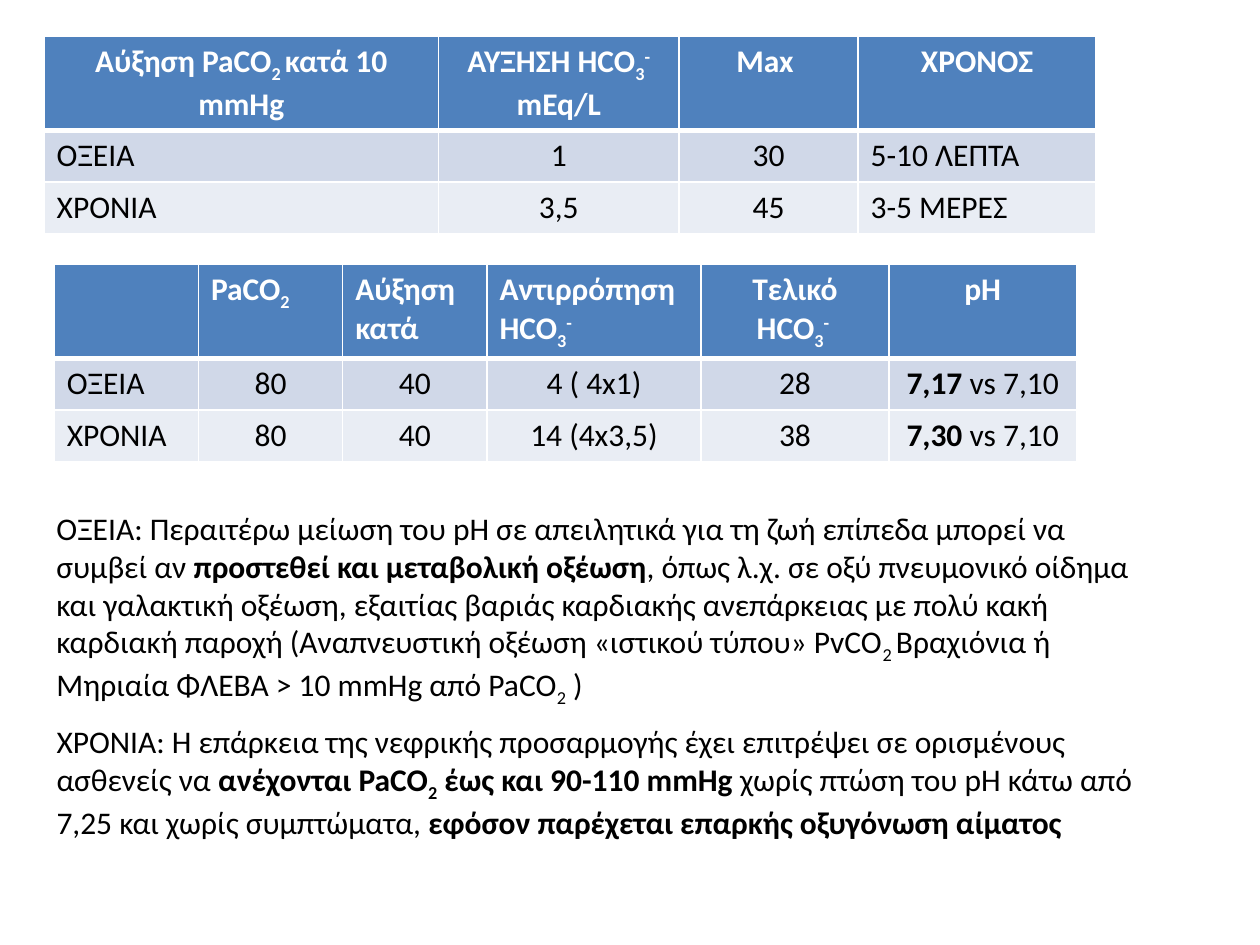
from lxml.etree import SubElement
from pptx import Presentation
from pptx.dml.color import RGBColor
from pptx.enum.text import MSO_AUTO_SIZE, PP_ALIGN
from pptx.oxml.ns import qn
from pptx.util import Inches, Pt

LEFT, CENTER = PP_ALIGN.LEFT, PP_ALIGN.CENTER
BOLD, SUB, SUPER = "bold", "sub", "super"
BASELINES = {SUB: "-25000", SUPER: "30000"}
TWO, THREE, MINUS = ("2", SUB), ("3", SUB), ("-", SUPER)


def color(value):
    """Turn a hex string into a colour."""
    return RGBColor.from_string(value)


class SlideBuilder:
    """Hold the style and the current slide, on a grid of 100 columns by 75 rows."""

    font, size = "Calibri", 18
    ink, paper = "000000", "FFFFFF"
    header_fill, band_fills = "4F81BD", ("E9EDF4", "D0D8E8")
    header_height, row_height = 6.9, 4.1

    def __init__(self, presentation):
        """Set the slide size and add a blank slide."""
        presentation.slide_width, presentation.slide_height = Inches(10), Inches(7.5)
        self.unit = presentation.slide_width / 100
        self.slide = presentation.slides.add_slide(presentation.slide_layouts[6])

    def grid(self, *lengths):
        """Turn grid lengths into slide lengths."""
        return [round(length * self.unit) for length in lengths]

    def add_runs(self, paragraph, runs, ink, bold=False, align=LEFT):
        """Fill a paragraph with runs, each plain text or text with styles."""
        paragraph.alignment = align
        for item in runs:
            text, *styles = (item,) if isinstance(item, str) else item
            run = paragraph.add_run()
            run.text = text
            run.font.name, run.font.size = self.font, Pt(self.size)
            run.font.bold = bold or BOLD in styles
            run.font.color.rgb = color(ink)
            for style in styles:
                if style in BASELINES:
                    run.font._element.set("baseline", BASELINES[style])

    def border(self, cell, side, width):
        """Draw one side of a cell."""
        line = SubElement(cell._tc.get_or_add_tcPr(), qn(f"a:ln{side}"), w=str(Pt(width)))
        fill = SubElement(line, qn("a:solidFill"))
        SubElement(fill, qn("a:srgbClr"), val=self.paper)

    def table(self, left, top, widths, aligns, rows):
        """Add a banded table whose first row is the header."""
        heights = [self.header_height] + [self.row_height] * (len(rows) - 1)
        frame = self.slide.shapes.add_table(
            len(rows), len(widths), *self.grid(left, top, sum(widths), sum(heights)))
        table = frame.table
        for column, width in zip(table.columns, self.grid(*widths)):
            column.width = width
        for row, height in zip(table.rows, self.grid(*heights)):
            row.height = height
        for index, row in enumerate(rows):
            header = index == 0
            fill = self.header_fill if header else self.band_fills[index % 2]
            for number, (paragraphs, align) in enumerate(zip(row, aligns[min(index, 1)])):
                cell = table.cell(index, number)
                sides = {"L": 1, "R": 1, "T": 3 if index == 1 else 1, "B": 3 if header else 1}
                for side, width in sides.items():
                    self.border(cell, side, width)
                cell.fill.solid()
                cell.fill.fore_color.rgb = color(fill)
                frame_text = cell.text_frame
                for order, runs in enumerate(paragraphs):
                    paragraph = frame_text.add_paragraph() if order else frame_text.paragraphs[0]
                    self.add_runs(paragraph, runs, self.paper if header else self.ink, header, align)

    def text(self, left, top, width, height, runs):
        """Add a wrapped text box with one paragraph."""
        box = self.slide.shapes.add_textbox(*self.grid(left, top, width, height))
        box.text_frame.word_wrap = True
        box.text_frame.auto_size = MSO_AUTO_SIZE.SHAPE_TO_FIT_TEXT
        self.add_runs(box.text_frame.paragraphs[0], runs, self.ink)


def plain(*texts):
    """Make a table row of single-run cells."""
    return [[[text]] for text in texts]


def main():
    """Build the slide and save it."""
    presentation = Presentation()
    builder = SlideBuilder(presentation)
    builder.table(
        3.5, 2.9, [31.3, 19.1, 14.2, 18.9],
        ([CENTER] * 4, [LEFT, CENTER, CENTER, LEFT]),
        [
            [[["Αύξηση PaCO", ("2 ", SUB), "κατά 10 mmHg"]],
             [["ΑΥΞΗΣΗ HCO", THREE, ("- ", SUPER), "mEq/L"]],
             [["Max "]], [["ΧΡΟΝΟΣ"]]],
            plain("ΟΞΕΙΑ", "1", "30", "5-10 ΛΕΠΤΑ"),
            plain("ΧΡΟΝΙΑ", "3,5", "45", "3-5 ΜΕΡΕΣ"),
        ])
    builder.table(
        4.3, 21, [11.45, 11.45, 11.45, 17, 14.9, 14.9],
        ([LEFT] * 4 + [CENTER] * 2, [LEFT] + [CENTER] * 5),
        [
            [[], [["PaCO", TWO]], [["Αύξηση"], ["κατά"]],
             [["Αντιρρόπηση"], ["HCO", THREE, MINUS]],
             [["Τελικό HCO", THREE, ("- ", SUPER)]], [["pH"]]],
            plain("ΟΞΕΙΑ", "80", "40", "4 ( 4x1)", "28") + [[[("7,17 ", BOLD), "vs 7,10"]]],
            plain("ΧΡΟΝΙΑ", "80", "40", "14 (4x3,5)", "38") + [[[("7,30 ", BOLD), "vs 7,10"]]],
        ])
    builder.text(3.5, 39.9, 87.4, 16.2, [
        "ΟΞΕΙΑ: Περαιτέρω μείωση του pH σε απειλητικά για τη ζωή επίπεδα μπορεί να συμβεί αν ",
        ("προστεθεί και μεταβολική οξέωση", BOLD),
        ", όπως λ.χ. σε οξύ πνευμονικό οίδημα και γαλακτική οξέωση, εξαιτίας βαριάς καρδιακής "
        "ανεπάρκειας με πολύ κακή καρδιακή παροχή (Αναπνευστική οξέωση «ιστικού τύπου» PvCO",
        ("2 ", SUB), "Bραχιόνια ή Μηριαία ΦΛΕΒΑ > 10 mmHg από PaCO", TWO, " )"])
    builder.text(3.5, 56.8, 89.9, 10.1, [
        "ΧΡΟΝΙΑ: Η επάρκεια της νεφρικής προσαρμογής έχει επιτρέψει σε ορισμένους ασθενείς να ",
        ("ανέχονται PaCO", BOLD), ("2", BOLD, SUB), (" έως και 90-110 mmHg ", BOLD),
        "χωρίς πτώση του pH κάτω από 7,25 και χωρίς συμπτώματα, ",
        ("εφόσον παρέχεται επαρκής οξυγόνωση αίματος", BOLD)])
    presentation.save("out.pptx")


if __name__ == "__main__":
    main()
